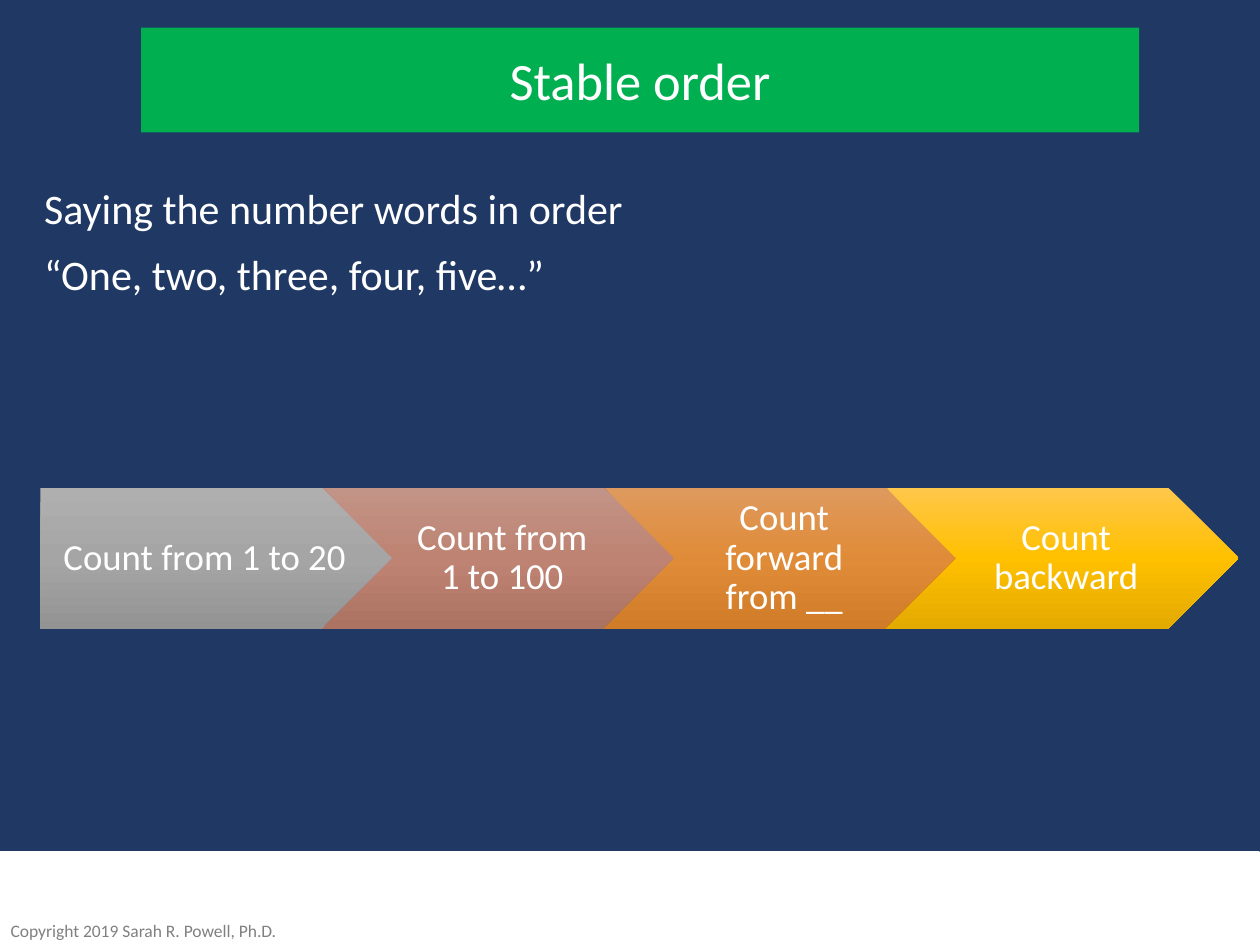
from lxml import etree
from pptx import Presentation
from pptx.dml.color import RGBColor
from pptx.enum.shapes import MSO_SHAPE
from pptx.enum.text import MSO_ANCHOR, MSO_AUTO_SIZE, PP_ALIGN
from pptx.oxml.ns import qn
from pptx.util import Inches, Pt

CENTER, LEFT, RIGHT = PP_ALIGN.CENTER, PP_ALIGN.LEFT, PP_ALIGN.RIGHT
TOP, MIDDLE = MSO_ANCHOR.TOP, MSO_ANCHOR.MIDDLE
NO_AUTOFIT = MSO_AUTO_SIZE.NONE
PENTAGON, CHEVRON, RECTANGLE = MSO_SHAPE.PENTAGON, MSO_SHAPE.CHEVRON, MSO_SHAPE.RECTANGLE

FONT = "Calibri"
NAVY = RGBColor(0x20, 0x38, 0x64)
GREEN = RGBColor(0x00, 0xB0, 0x50)
WHITE = RGBColor(0xFF, 0xFF, 0xFF)
GRAY = RGBColor(0x80, 0x80, 0x80)

# Each step: wording and its gradient from top to bottom
STEPS = [
    ("Count from 1 to 20", ("AFAFAF", "A5A5A5", "939393")),
    ("Count from 1 to 100", ("C29487", "BE8373", "AD7362")),
    ("Count forward from __", ("DE9A5E", "E08B38", "D07C29")),
    ("Count backward", ("FFC74B", "FFC000", "E3AA00")),
]


def place(sp, left, top, width, height):
    sp.left, sp.top = Inches(left), Inches(top)
    sp.width, sp.height = Inches(width), Inches(height)


def set_frame(tf, anchor, insets=(0.1, 0.05, 0.1, 0.05)):
    tf.word_wrap = True
    tf.auto_size = NO_AUTOFIT
    tf.vertical_anchor = anchor
    tf.margin_left, tf.margin_top, tf.margin_right, tf.margin_bottom = map(Inches, insets)


def add_text(p, text, size, color, align):
    p.alignment = align
    r = p.add_run()
    r.text = text
    r.font.name, r.font.size = FONT, Pt(size)
    r.font.color.rgb = color


def fill_gradient(sp, colors):
    sp.fill.gradient()
    sp.fill.gradient_angle = 270  # top to bottom
    stops = sp.element.spPr.find(qn("a:gradFill")).find(qn("a:gsLst"))
    for stop in list(stops):
        stops.remove(stop)
    for i, color in enumerate(colors):
        stop = etree.SubElement(stops, qn("a:gs"), pos=str(i * 50000))
        etree.SubElement(stop, qn("a:srgbClr"), val=color)


def build_title(s, box):
    sp = s.shapes.title
    place(sp, *box)
    sp.fill.solid()
    sp.fill.fore_color.rgb = GREEN
    set_frame(sp.text_frame, MIDDLE)
    add_text(sp.text_frame.paragraphs[0], "Stable order", 30, WHITE, CENTER)


def build_body(s, box):
    sp = s.placeholders[1]
    place(sp, *box)
    tf = sp.text_frame
    set_frame(tf, TOP)
    lines = ["Saying the number words in order", "“One, two, three, four, five…”"]
    for i, line in enumerate(lines):
        p = tf.add_paragraph() if i else tf.paragraphs[0]
        pPr = p._p.get_or_add_pPr()
        pPr.set("marL", "0")
        pPr.set("indent", "0")
        etree.SubElement(pPr, qn("a:buNone"))
        p.line_spacing = 1.1
        p.space_before = Pt(6 if i else 0)
        add_text(p, line, 24, WHITE, LEFT)


def build_steps(s, box):
    left, top, width, height = box
    # Neighbours overlap by a fifth of a step
    step_width = width / (1 + 0.8 * (len(STEPS) - 1))
    for i, (text, colors) in enumerate(STEPS):
        sp = s.shapes.add_shape(CHEVRON if i else PENTAGON, 0, 0, 0, 0)
        place(sp, left + 0.8 * step_width * i, top, step_width, height)
        sp.shadow.inherit = False
        sp.line.fill.background()
        fill_gradient(sp, colors)
        tf = sp.text_frame
        set_frame(tf, MIDDLE, (0.09 if i else 0.12, 0.06, 0.03, 0.06))
        tf.paragraphs[0].line_spacing = 0.9
        add_text(tf.paragraphs[0], text, 21, WHITE, CENTER)


def build_footer(s, box):
    band = s.shapes.add_shape(RECTANGLE, *map(Inches, box))
    band.shadow.inherit = False
    band.fill.solid()
    band.fill.fore_color.rgb = WHITE
    band.line.color.rgb = WHITE
    band.line.width = Pt(1)
    # Copyright line, right-aligned along the bottom of the band
    left, top, _, height = box
    credit = s.shapes.add_textbox(0, 0, 0, 0)
    place(credit, left - 1.35, top + height - 0.2, 3.64, 0.17)
    set_frame(credit.text_frame, MIDDLE, (0.1, 0, 0.1, 0))
    add_text(credit.text_frame.paragraphs[0], "Copyright 2019 Sarah R. Powell, Ph.D.",
             10, GRAY, RIGHT)


def main():
    prs = Presentation()
    prs.slide_width, prs.slide_height = Inches(10), Inches(7.5)
    s = prs.slides.add_slide(prs.slide_layouts[1])
    s.background.fill.solid()
    s.background.fill.fore_color.rgb = NAVY
    build_footer(s, (0, 6.76, 9.99, 0.74))
    build_body(s, (0.25, 1.36, 9.5, 5.29))
    build_title(s, (1.12, 0.22, 7.92, 0.83))
    build_steps(s, (0.32, 3.87, 9.51, 1.12))
    prs.save("out.pptx")


if __name__ == "__main__":
    main()
